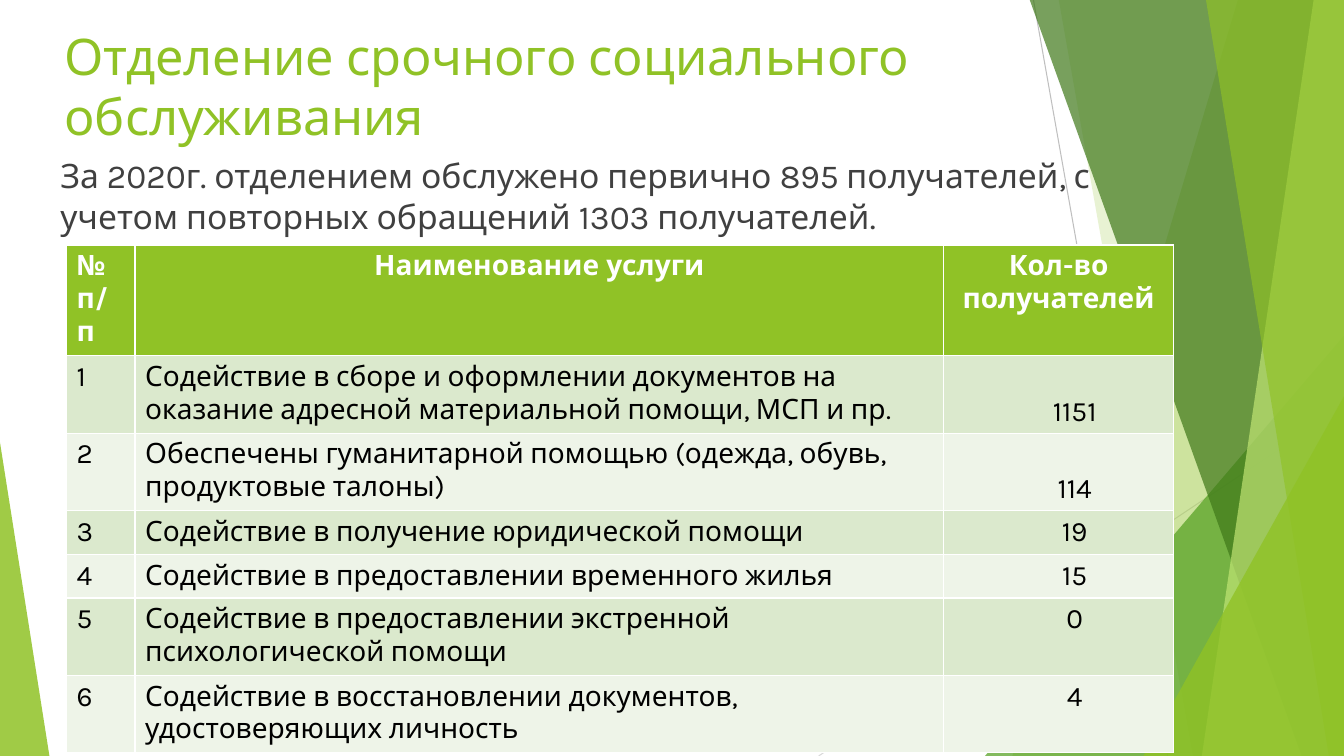
from lxml import etree
from pptx import Presentation
from pptx.dml.color import RGBColor
from pptx.enum.shapes import MSO_CONNECTOR, MSO_SHAPE
from pptx.enum.text import MSO_ANCHOR, PP_ALIGN
from pptx.oxml.ns import qn
from pptx.util import Inches, Pt

FONT = "Karla"
GREEN = "90C226"
STRAIGHT = MSO_CONNECTOR.STRAIGHT
TRIANGLE = MSO_SHAPE.ISOSCELES_TRIANGLE
TOP, BOTTOM = MSO_ANCHOR.TOP, MSO_ANCHOR.BOTTOM
LEFT, CENTER = PP_ALIGN.LEFT, PP_ALIGN.CENTER


def fill_shape(shape, color, opacity):
    shape.shadow.inherit = False
    shape.line.fill.background()
    shape.fill.solid()
    shape.fill.fore_color.rgb = RGBColor.from_string(color)
    color_element = shape.fill._xPr.find(qn("a:solidFill"))[0]
    etree.SubElement(color_element, qn("a:alpha"), val=str(opacity * 1000))


def write_text(text_frame, text, size, color, bold=False, align=LEFT):
    text_frame.word_wrap = True
    text_frame.text = text
    paragraph = text_frame.paragraphs[0]
    paragraph.alignment = align
    font = paragraph.runs[0].font
    font.name, font.size, font.bold = FONT, Pt(size), bold
    font.color.rgb = RGBColor.from_string(color)


presentation = Presentation()
presentation.slide_width = Inches(13.33)
presentation.slide_height = Inches(7.5)
slide = presentation.slides.add_slide(presentation.slide_layouts[6])
shapes = slide.shapes

# Thin background lines
for x1, y1, x2, y2, color in [
    (10.25, 0, 11.58, 7.5, "BFBFBF"),
    (13.33, 4.03, 8.12, 7.5, "D9D9D9"),
]:
    line = shapes.add_connector(STRAIGHT, Inches(x1), Inches(y1), Inches(x2), Inches(y2))
    line.line.color.rgb = RGBColor.from_string(color)
    line.line.width = Pt(0.75)
    etree.SubElement(line._element.spPr, qn("a:effectLst"))

# Translucent facets: bands as (top x, bottom x) reaching the right edge,
# triangles as (left, top, width, height, apex)
facets = [
    ((12.28, 10.04), GREEN, 30),
    ((10.5, 11.83), GREEN, 20),
    ((9.77, 3.33, 3.56, 4.17, 1), "54A021", 72),
    ((10.21, 12.91), "3F7819", 70),
    ((13.03, 11.92), "C0E474", 70),
    ((11.96, 13.18), GREEN, 65),
    ((11.34, 3.93, 1.99, 3.57, 1), GREEN, 80),
    ((0, 4.39, 0.49, 3.11, 0), GREEN, 85),
]
for geometry, color, opacity in facets:
    if len(geometry) == 2:
        top_x, bottom_x = geometry
        builder = shapes.build_freeform(Inches(top_x), Inches(-0.01))
        corners = [(13.33, -0.01), (13.33, 7.5), (bottom_x, 7.5)]
        builder.add_line_segments([(Inches(x), Inches(y)) for x, y in corners])
        facet = builder.convert_to_shape()
    else:
        *box, apex = geometry
        facet = shapes.add_shape(TRIANGLE, *map(Inches, box))
        facet.adjustments[0] = apex
    fill_shape(facet, color, opacity)

# Title and summary
for box, text, size, color in [
    ((0.54, 0.2, 9.4, 1.44), "Отделение срочного социального обслуживания", 36, GREEN),
    ((0.5, 1.49, 10.72, 1.08),
     "За 2020г. отделением обслужено первично 895 получателей, "
     "с учетом повторных обращений 1303 получателей.", 24, "404040"),
]:
    text_box = shapes.add_textbox(*map(Inches, box))
    text_box.text_frame.vertical_anchor = TOP
    write_text(text_box.text_frame, text, size, color)

# Table of services
headers = ("№ п/п", "Наименование услуги", "Кол-во получателей")
services = [
    ("Содействие в сборе и оформлении документов на оказание "
     "адресной материальной помощи, МСП и пр.", 1151),
    ("Обеспечены гуманитарной помощью (одежда, обувь, продуктовые талоны)", 114),
    ("Содействие в получение юридической помощи", 19),
    ("Содействие в предоставлении временного жилья", 15),
    ("Содействие в предоставлении экстренной психологической помощи", 0),
    ("Содействие в восстановлении документов, удостоверяющих личность", 4),
]
rows = [headers] + [(str(n), name, str(count)) for n, (name, count) in enumerate(services, 1)]
column_widths = [0.68, 8.02, 2.28]
row_heights = [1.07, 0.75, 0.75, 0.43, 0.43, 0.75, 0.75]
table = shapes.add_table(
    len(rows), len(headers), Inches(0.66), Inches(2.43),
    Inches(sum(column_widths)), Inches(sum(row_heights)),
).table
for column, width in zip(table.columns, column_widths):
    column.width = Inches(width)
for row, height in zip(table.rows, row_heights):
    row.height = Inches(height)

for r, values in enumerate(rows):
    is_header = r == 0
    row_fill = GREEN if is_header else ("EEF4E8", "DBE9CD")[r % 2]
    for c, value in enumerate(values):
        cell = table.cell(r, c)
        cell.fill.solid()
        cell.fill.fore_color.rgb = RGBColor.from_string(row_fill)
        is_count = c == 2 and not is_header
        centered = c == 2 or (is_header and c == 1)
        write_text(cell.text_frame, value, 20, "FFFFFF" if is_header else "000000",
                   is_header, CENTER if centered else LEFT)
        # Counts sit right of centre, the first two on the lower line
        if is_count:
            cell.margin_left = Inches(0.42)
            cell.vertical_anchor = BOTTOM if r <= 2 else TOP

presentation.save("out.pptx")
